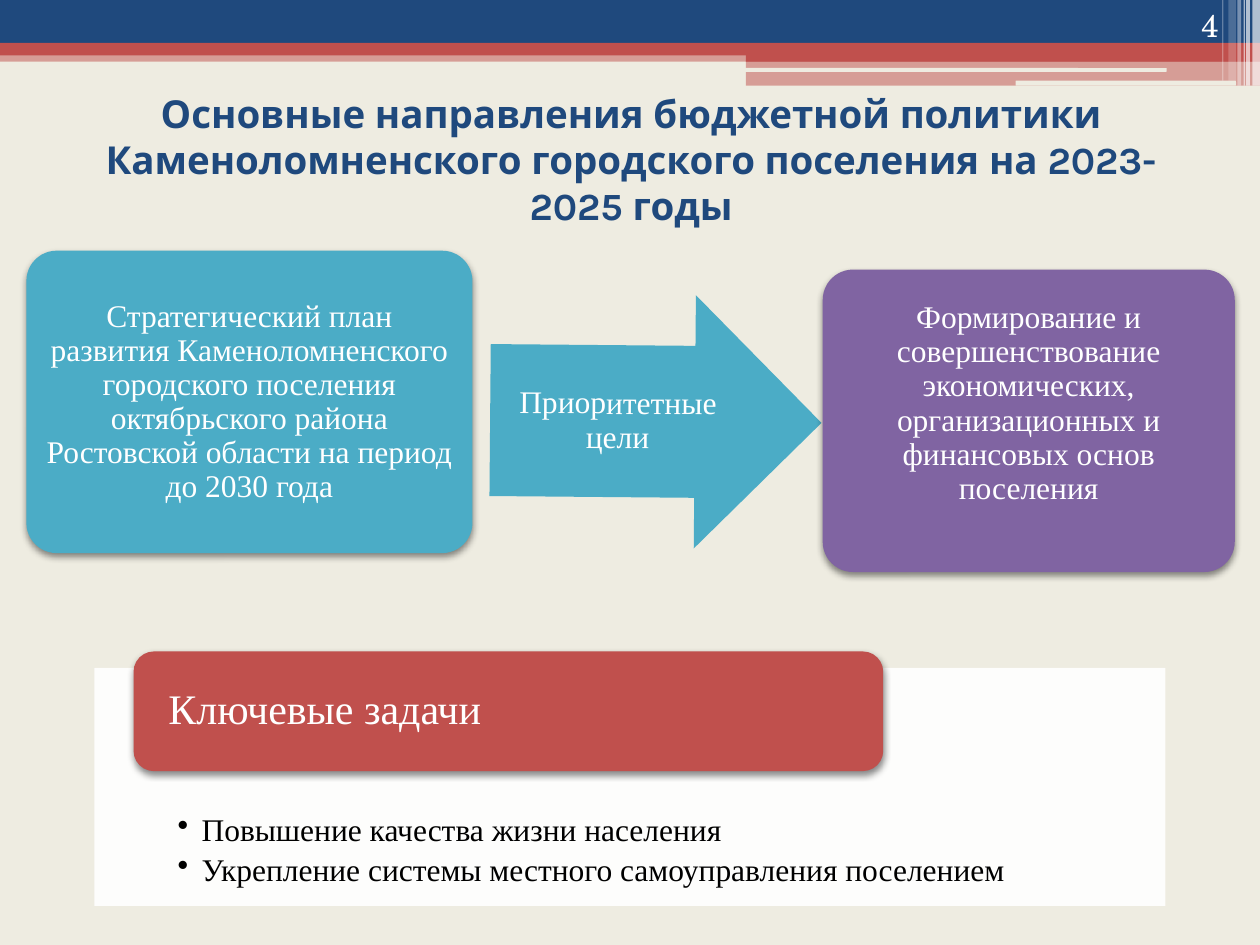
from lxml import etree
from pptx import Presentation
from pptx.dml.color import RGBColor
from pptx.enum.shapes import MSO_SHAPE as Shape
from pptx.enum.text import MSO_ANCHOR as Anchor, MSO_AUTO_SIZE as AutoSize, PP_ALIGN as Align
from pptx.oxml.ns import qn
from pptx.util import Inches, Pt

COLORS = {
    "navy": "1F497D",
    "red": "C0504D",
    "teal": "4BACC6",
    "purple": "8064A2",
    "cream": "EEECE1",
    "white": "FFFFFF",
    "black": "000000",
}
COLUMNS, ROWS = 100, 75
SERIF = "Times New Roman"


def add_element(parent, tag, **attributes):
    return etree.SubElement(parent, qn(tag), attributes)


class SlideBuilder:
    def __init__(self, presentation):
        self.column = presentation.slide_width / COLUMNS
        self.row = presentation.slide_height / ROWS
        self.slide = presentation.slides.add_slide(presentation.slide_layouts[5])
        self.paint(self.slide.background.fill, "cream")

    def paint(self, fill, color, opacity=100):
        fill.solid()
        fill.fore_color.rgb = RGBColor.from_string(COLORS[color])
        if opacity < 100:
            choice = fill._xPr.find(qn("a:solidFill"))[0]
            add_element(choice, "a:alpha", val=str(opacity * 1000))

    def place(self, left, top, width, height):
        return (round(left * self.column), round(top * self.row),
                round(width * self.column), round(height * self.row))

    def set_text(self, shape, lines, size, color="white", font=SERIF, bold=False,
                 align=Align.CENTER, anchor=Anchor.MIDDLE, insets=(0.1, 0.05, 0.1, 0.05),
                 spacing=0.9, gap=0, bullets=False):
        frame = shape.text_frame
        frame.text = "\n".join(lines)
        frame.word_wrap = True
        frame.auto_size = AutoSize.NONE
        frame.vertical_anchor = anchor
        (frame.margin_left, frame.margin_top,
         frame.margin_right, frame.margin_bottom) = map(Inches, insets)
        for paragraph in frame.paragraphs:
            if bullets:
                properties = paragraph._p.get_or_add_pPr()
                properties.set("marL", str(Inches(0.19)))
                properties.set("indent", str(-Inches(0.19)))
                add_element(properties, "a:buChar", char="•")
            paragraph.alignment = align
            paragraph.line_spacing = spacing
            paragraph.space_after = Pt(gap)
            for run in paragraph.runs:
                run.font.size = Pt(size)
                run.font.name = font
                run.font.bold = bold
                run.font.color.rgb = RGBColor.from_string(COLORS[color])

    def title(self, text, area):
        shape = self.slide.shapes.title
        shape.left, shape.top, shape.width, shape.height = self.place(*area)
        self.set_text(shape, [text], 22, "navy", "Karla", bold=True, spacing=1)

    def label(self, text, area, **style):
        shape = self.slide.shapes.add_textbox(*self.place(*area))
        self.set_text(shape, [text], **style)

    def block(self, area, color, opacity=100, kind=Shape.RECTANGLE):
        shape = self.slide.shapes.add_shape(kind, *self.place(*area))
        shape.shadow.inherit = False
        shape.line.fill.background()
        self.paint(shape.fill, color, opacity)
        return shape

    def card(self, lines, area, color, corner, size=18, **style):
        shape = self.block(area, color, kind=Shape.ROUNDED_RECTANGLE)
        shape.adjustments[0] = corner
        effects = shape._element.spPr.find(qn("a:effectLst"))
        shadow = add_element(effects, "a:outerShdw", blurRad=str(Pt(4)), dist=str(Pt(2)),
                             dir="5400000", rotWithShape="0")
        shade = add_element(shadow, "a:srgbClr", val=COLORS["black"])
        add_element(shade, "a:alpha", val="45000")
        self.set_text(shape, lines, size, **style)

    def arrow(self, lines, area, color, rotation):
        shape = self.block(area, color, kind=Shape.RIGHT_ARROW)
        shape.adjustments[0] = 0.6
        shape.adjustments[1] = 0.5
        shape.rotation = rotation
        self.set_text(shape, lines, 18, insets=(0, 0, 0, 0))

    def header(self):
        bands = [
            ((0, 4, 100, 0.9), "red", 50),
            ((0, 0, 100, 3.4), "navy", 100),
            ((0, 3.4, 100, 1), "red", 100),
            ((59.2, 3.9, 40.8, 1), "red", 100),
            ((59.2, 4.8, 40.8, 2), "red", 50),
        ]
        for area, color, opacity in bands:
            self.block(area, color, opacity)
        for area in [(59.1, 5.4, 33.5, 0.3), (80.6, 6.4, 17.5, 0.4)]:
            self.block(area, "cream", kind=Shape.ROUNDED_RECTANGLE)
        stripes = [
            (99.4, 0.6, 6.8, 65), (98.9, 0.3, 6.8, 65), (98.7, 0.1, 6.8, 60),
            (98.2, 0.3, 6.8, 40), (97.5, 0.6, 6.4, 20), (97, 0.1, 6.4, 30),
        ]
        for left, width, height, opacity in stripes:
            self.block((left, 0, width, height), "white", opacity)


def main():
    presentation = Presentation()
    presentation.slide_width = Inches(10)
    presentation.slide_height = Inches(7.5)
    builder = SlideBuilder(presentation)
    builder.header()
    builder.title("Основные направления бюджетной политики Каменоломненского "
                  "городского поселения на 2023-2025 годы", (5.1, 6.8, 90, 11.7))
    builder.label("4", (89.4, 0, 8.3, 4), size=18, font="TeX Gyre Schola",
                  align=Align.RIGHT, anchor=Anchor.BOTTOM, spacing=1)

    tasks = builder.block((7.5, 53, 85, 18.9), "white", 90)
    builder.set_text(tasks, ["Повышение качества жизни населения",
                             "Укрепление системы местного самоуправления поселением"],
                     18, "black", align=Align.LEFT, anchor=Anchor.TOP,
                     insets=(0.66, 1.16, 0.66, 0.14), gap=3.5, bullets=True)
    builder.card(["Ключевые задачи"], (10.6, 51.7, 59.5, 9.5), "red", 0.17, size=24,
                 align=Align.LEFT, insets=(0.23, 0, 0.23, 0))

    builder.card(["Стратегический план развития Каменоломненского городского поселения "
                  "октябрьского района Ростовской области на период до 2030 года"],
                 (2.1, 19.9, 35.4, 24), "teal", 0.1, insets=(0.07, 0.07, 0.07, 0.07))
    builder.arrow(["Приоритетные цели"], (38.9, 23.4, 26.3, 20.1), "teal", 0.5)
    builder.card(["Формирование и совершенствование экономических, организационных "
                  "и финансовых основ поселения"],
                 (65.3, 21.4, 32.7, 24), "purple", 0.1, insets=(0.07, 0.07, 0.07, 0.34))
    presentation.save("out.pptx")


if __name__ == "__main__":
    main()
